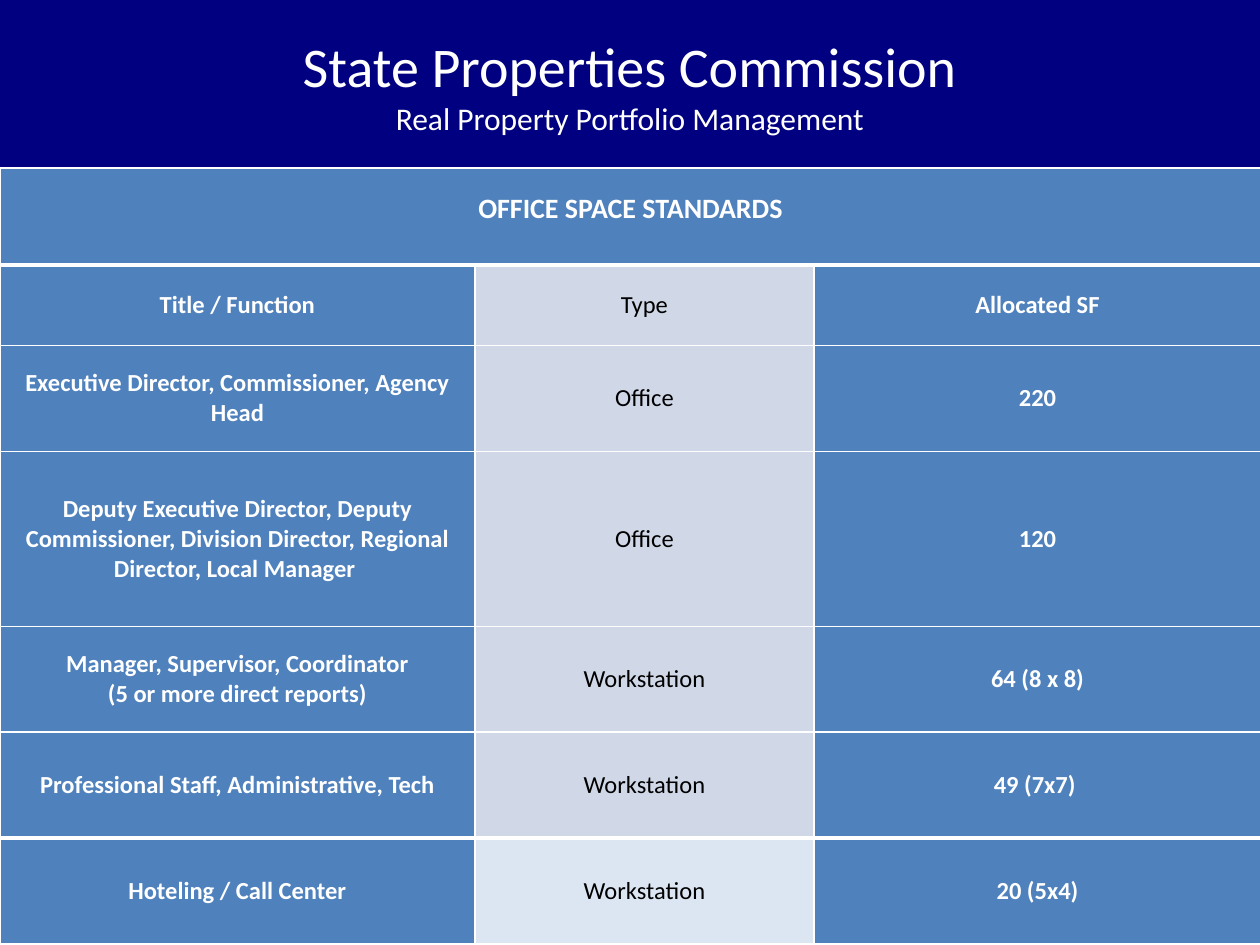
import pptx
import pptx.util
import pptx.dml.color
import pptx.enum.shapes
import pptx.enum.text
import pptx.oxml
import pptx.oxml.ns
from dataclasses import dataclass

Pt = pptx.util.Pt


@dataclass(frozen=True)
class Theme:
    """Colours, font and type sizes of the slide."""
    navy: str = "000080"
    blue: str = "4F81BD"
    pale: str = "D0D8E8"
    paler: str = "DCE6F2"
    white: str = "FFFFFF"
    black: str = "000000"
    font: str = "Calibri"
    title: int = 32
    subtitle: int = 18
    heading: int = 16
    body: int = 14


THEME = Theme()
TOP = 96
COLS = [271.4, 193.7, 255.6]
HEIGHTS = [55.4, 46.1, 60.4, 100.2, 60.4, 60.4, 60.4]
THICK_EDGES = (1, 6)
HEADING = "OFFICE SPACE STANDARDS"
ROWS = [
    ("Title / Function", "Type", "Allocated SF"),
    ("Executive Director, Commissioner, Agency Head", "Office", "220"),
    ("Deputy Executive Director, Deputy Commissioner, Division Director, "
     "Regional Director, Local Manager ", "Office", "120"),
    ("Manager, Supervisor, Coordinator\n(5 or more direct reports)",
     "Workstation", "64 (8 x 8)"),
    ("Professional Staff, Administrative, Tech", "Workstation", "49 (7x7) "),
    ("Hoteling / Call Center", "Workstation", "20 (5x4)"),
]


def rgb(value):
    """Turn a hex string into a colour."""
    return pptx.dml.color.RGBColor.from_string(value)


def fill_solid(obj, color):
    """Give a shape or cell a plain fill."""
    obj.fill.solid()
    obj.fill.fore_color.rgb = rgb(color)


def write(tf, text, sizes, color=THEME.white, bold=False):
    """Write centred lines, the last size serving any lines left over."""
    for i, line in enumerate(text.split("\n")):
        p = tf.paragraphs[0] if i == 0 else tf.add_paragraph()
        p.alignment = pptx.enum.text.PP_ALIGN.CENTER
        r = p.add_run()
        r.text = line
        r.font.name = THEME.font
        r.font.size = Pt(sizes[min(i, len(sizes) - 1)])
        r.font.bold = bold
        r.font.color.rgb = rgb(color)


def add_borders(cell, row):
    """Draw white cell borders, thicker on the marked row edges."""
    top = 3 if row in THICK_EDGES else 1
    bottom = 3 if row + 1 in THICK_EDGES else 1
    tcPr = cell._tc.get_or_add_tcPr()
    sides = [("lnL", 1), ("lnR", 1), ("lnT", top), ("lnB", bottom)]
    for i, (tag, width) in enumerate(sides):
        tcPr.insert(i, pptx.oxml.parse_xml(
            f'<a:{tag} {pptx.oxml.ns.nsdecls("a")} w="{Pt(width)}"><a:solidFill>'
            f'<a:srgbClr val="{THEME.white}"/></a:solidFill></a:{tag}>'))


def format_cell(cell, row, fill):
    """Set the fill, margins, anchor and borders of a cell."""
    fill_solid(cell, fill)
    cell.margin_left = cell.margin_right = Pt(5)
    cell.margin_top = cell.margin_bottom = 0
    cell.vertical_anchor = pptx.enum.text.MSO_ANCHOR.MIDDLE
    add_borders(cell, row)


def add_banner(s, text, width, height):
    """Add the title band across the top."""
    sp = s.shapes.add_shape(
        pptx.enum.shapes.MSO_SHAPE.RECTANGLE, 0, 0, Pt(width), Pt(height))
    sp.shadow.inherit = False
    fill_solid(sp, THEME.navy)
    sp.line.fill.background()
    tf = sp.text_frame
    tf.word_wrap = True
    tf.vertical_anchor = pptx.enum.text.MSO_ANCHOR.MIDDLE
    write(tf, text, [THEME.title, THEME.subtitle])


def add_standards_table(s):
    """Add the table of office space standards."""
    table = s.shapes.add_table(
        len(HEIGHTS), len(COLS), 0, Pt(TOP), Pt(sum(COLS)), Pt(sum(HEIGHTS))).table
    table.first_row = table.horz_banding = False
    for col, width in zip(table.columns, COLS):
        col.width = Pt(width)
    for row, height in zip(table.rows, HEIGHTS):
        row.height = Pt(height)

    head = table.cell(0, 0)
    head.merge(table.cell(0, len(COLS) - 1))
    for c in range(len(COLS)):
        format_cell(table.cell(0, c), 0, THEME.blue)
    head.vertical_anchor = pptx.enum.text.MSO_ANCHOR.TOP
    head.margin_top = Pt(13.4)
    write(head.text_frame, HEADING, [THEME.heading], bold=True)

    for r, texts in enumerate(ROWS, 1):
        type_fill = THEME.paler if r == len(ROWS) else THEME.pale
        for c, text in enumerate(texts):
            is_type = c == 1
            cell = table.cell(r, c)
            format_cell(cell, r, type_fill if is_type else THEME.blue)
            write(cell.text_frame, text, [THEME.body],
                  color=THEME.black if is_type else THEME.white, bold=not is_type)


def main():
    """Build and save the slide."""
    prs = pptx.Presentation()
    prs.slide_width, prs.slide_height = Pt(720), Pt(540)
    s = prs.slides.add_slide(prs.slide_layouts[6])
    add_banner(s, "State Properties Commission\nReal Property Portfolio Management",
               720, TOP)
    add_standards_table(s)
    prs.save("out.pptx")


if __name__ == "__main__":
    main()
